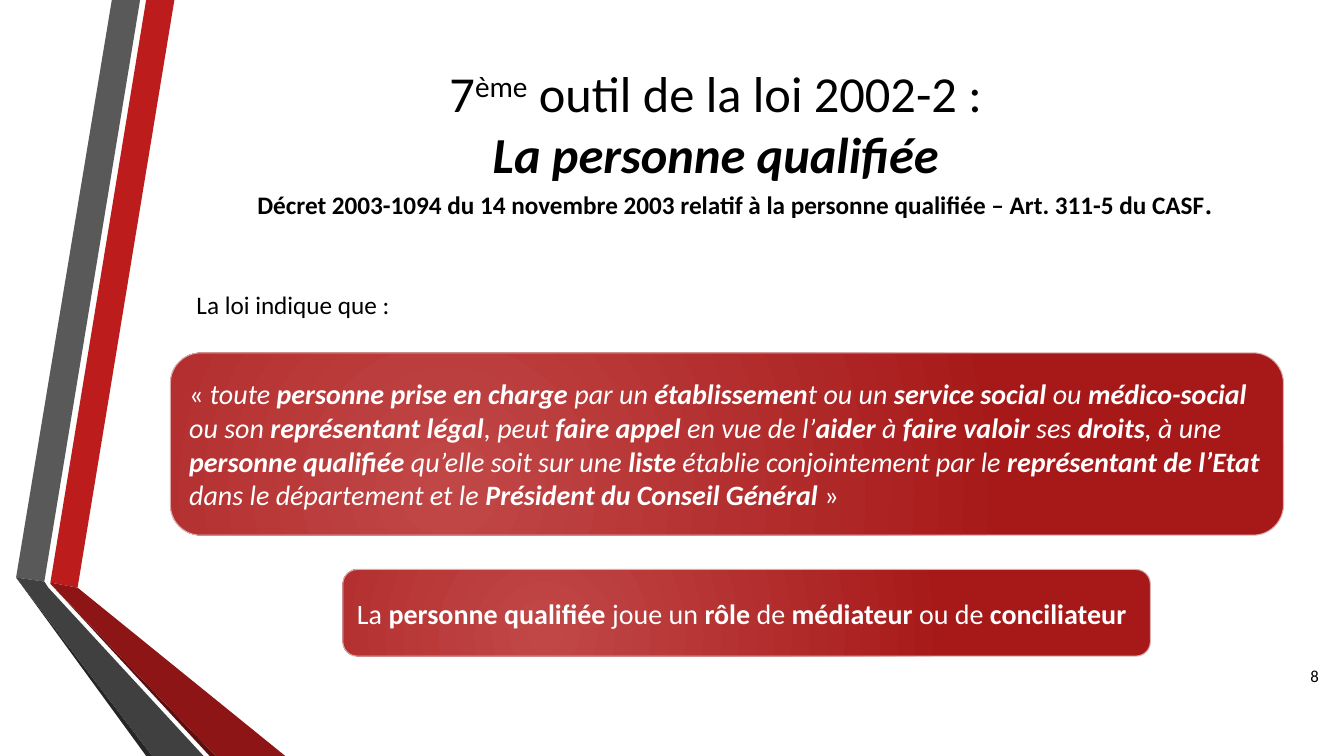
from copy import deepcopy

from lxml.etree import SubElement
from pptx import Presentation
from pptx.dml.color import RGBColor
from pptx.enum.shapes import MSO_SHAPE
from pptx.enum.text import MSO_ANCHOR, PP_ALIGN
from pptx.oxml.ns import qn
from pptx.util import Inches, Pt

BLACK = RGBColor(0x00, 0x00, 0x00)
WHITE = RGBColor(0xFF, 0xFF, 0xFF)
RED = RGBColor(0xBC, 0x1C, 0x1C)
GREY = RGBColor(0x59, 0x59, 0x59)
GREY_EDGE = RGBColor(0x26, 0x26, 0x26)
RED_EDGE = RGBColor(0x5E, 0x0E, 0x0E)
RED_FOLD = RGBColor(0x8D, 0x15, 0x15)
GREY_FOLD = RGBColor(0x40, 0x40, 0x40)
PANEL_LIGHT = RGBColor(0xC1, 0x47, 0x47)
PANEL_DARK = RGBColor(0xA7, 0x19, 0x19)
PANEL_BORDER = RGBColor(0xDA, 0xAC, 0xAC)

# Ribbon pieces, back to front: colour, outline in inches
RIBBONS = [
    (RED, [(0.5, 5.78), (0.77, 5.83), (1.73, 0), (1.45, 0)]),
    (GREY, [(1.39, 0), (1.11, 0), (0.16, 5.73), (0.44, 5.77)]),
    (GREY_EDGE, [(0.16, 5.73), (1.45, 7.5), (1.51, 7.5)]),
    (RED_EDGE, [(0.5, 5.79), (2.08, 7.5), (2.14, 7.5)]),
    (RED_FOLD, [(0.5, 5.79), (2.14, 7.5), (2.83, 7.5), (0.77, 5.83), (0.5, 5.78)]),
    (GREY_FOLD, [(2.02, 7.5), (0.48, 5.83), (0.44, 5.77), (0.16, 5.73), (1.51, 7.5)]),
]

# Marks in texts: * toggles bold, _ italic, ^ superscript, ~ Times New Roman, | breaks the line
TITLE = "7^ème^ outil de la loi 2002-2 :|*_La personne qualifiée"
TITLE_BOX = (1.62, 0.75, 10.96, 1.45)

# Text, box, size, alignment, anchor
LABELS = [
    ("*Décret 2003-1094 du 14 novembre 2003 relatif à la personne qualifiée"
     " – Art. 311-5 du CASF~.",
     (1.81, 1.83, 10.95, 0.4), 18, PP_ALIGN.CENTER, MSO_ANCHOR.TOP),
    ("La loi indique que :", (1.85, 2.82, 3.91, 0.4), 18, PP_ALIGN.LEFT, MSO_ANCHOR.TOP),
    ("8", (12.58, 6.5, 0.6, 0.4), 12, PP_ALIGN.RIGHT, MSO_ANCHOR.MIDDLE),
]

PANELS = [
    ("« _toute *personne prise en charge *par un *établissemen*t ou un "
     "*service social *ou *médico-social *ou son *représentant légal*, peut "
     "*faire appel *en vue de l’*aider *à *faire valoir *ses *droits*, à une "
     "*personne qualifiée* qu’elle soit sur une *liste* établie conjointement "
     "par le *représentant de l’Etat *dans le département et le"
     "* Président du Conseil Général *_»",
     (1.69, 3.5, 11.04, 1.81)),
    ("La *personne qualifiée* joue un *rôle* de *médiateur* ou de *conciliateur",
     (3.4, 5.65, 8.01, 0.86)),
]


def inches(box):
    return [Inches(length) for length in box]


def split_marks(text):
    """Yield each stretch of text with the set of marks active on it."""
    active, stretch = set(), ""
    for letter in text:
        if letter not in "*_^~|":
            stretch += letter
            continue
        if stretch:
            yield stretch, set(active)
            stretch = ""
        if letter == "|":
            yield letter, set(active)
        else:
            active ^= {letter}
    if stretch:
        yield stretch, active


def write(frame, text, size, color, align, anchor):
    frame.word_wrap = True
    frame.vertical_anchor = anchor
    paragraph = frame.paragraphs[0]
    paragraph.alignment = align
    for stretch, marks in split_marks(text):
        if stretch == "|":
            paragraph.add_line_break()
            line_break = paragraph._p.findall(qn("a:br"))[-1]
            line_break.append(deepcopy(run._r.rPr))
            continue
        run = paragraph.add_run()
        run.text = stretch
        formats = {
            "name": "Times New Roman" if "~" in marks else "Calibri",
            "size": Pt(size),
            "bold": "*" in marks,
            "italic": "_" in marks,
        }
        for attribute, value in formats.items():
            setattr(run.font, attribute, value)
        run.font.color.rgb = color
        if "^" in marks:
            run._r.get_or_add_rPr().set("baseline", "30000")


def add_ribbon(slide, color, outline):
    start, *others = [inches(point) for point in outline]
    builder = slide.shapes.build_freeform(*start)
    builder.add_line_segments(others, close=True)
    ribbon = builder.convert_to_shape()
    ribbon.shadow.inherit = False
    ribbon.fill.solid()
    ribbon.fill.fore_color.rgb = color
    ribbon.line.fill.background()


def fill_radial(shape):
    """Spread the panel colours in circles from the lower left."""
    shape.fill.gradient()
    stops = shape.fill.gradient_stops
    for stop, position, color in zip(stops, (0, 1), (PANEL_LIGHT, PANEL_DARK)):
        stop.position = position
        stop.color.rgb = color
    gradient = shape._element.spPr.find(qn("a:gradFill"))
    gradient.remove(gradient.find(qn("a:lin")))
    circle = SubElement(gradient, qn("a:path"), {"path": "circle"})
    SubElement(circle, qn("a:fillToRect"),
               {"l": "50000", "t": "100000", "r": "100000", "b": "50000"})


def add_panel(slide, text, box):
    panel = slide.shapes.add_shape(MSO_SHAPE.ROUNDED_RECTANGLE, *inches(box))
    panel.shadow.inherit = False
    fill_radial(panel)
    panel.line.color.rgb = PANEL_BORDER
    panel.line.width = Pt(0.75)
    write(panel.text_frame, text, 20, WHITE, PP_ALIGN.LEFT, MSO_ANCHOR.MIDDLE)


def main():
    deck = Presentation()
    deck.slide_width, deck.slide_height = Inches(13.33), Inches(7.5)
    slide = deck.slides.add_slide(deck.slide_layouts[5])

    for color, outline in RIBBONS:
        add_ribbon(slide, color, outline)

    title = slide.shapes.title
    title.left, title.top, title.width, title.height = inches(TITLE_BOX)
    title.text_frame.margin_bottom = Inches(0.56)
    write(title.text_frame, TITLE, 36, BLACK, PP_ALIGN.CENTER, MSO_ANCHOR.MIDDLE)

    for text, box, size, align, anchor in LABELS:
        label = slide.shapes.add_textbox(*inches(box))
        write(label.text_frame, text, size, BLACK, align, anchor)

    for text, box in PANELS:
        add_panel(slide, text, box)

    deck.save("out.pptx")


if __name__ == "__main__":
    main()
